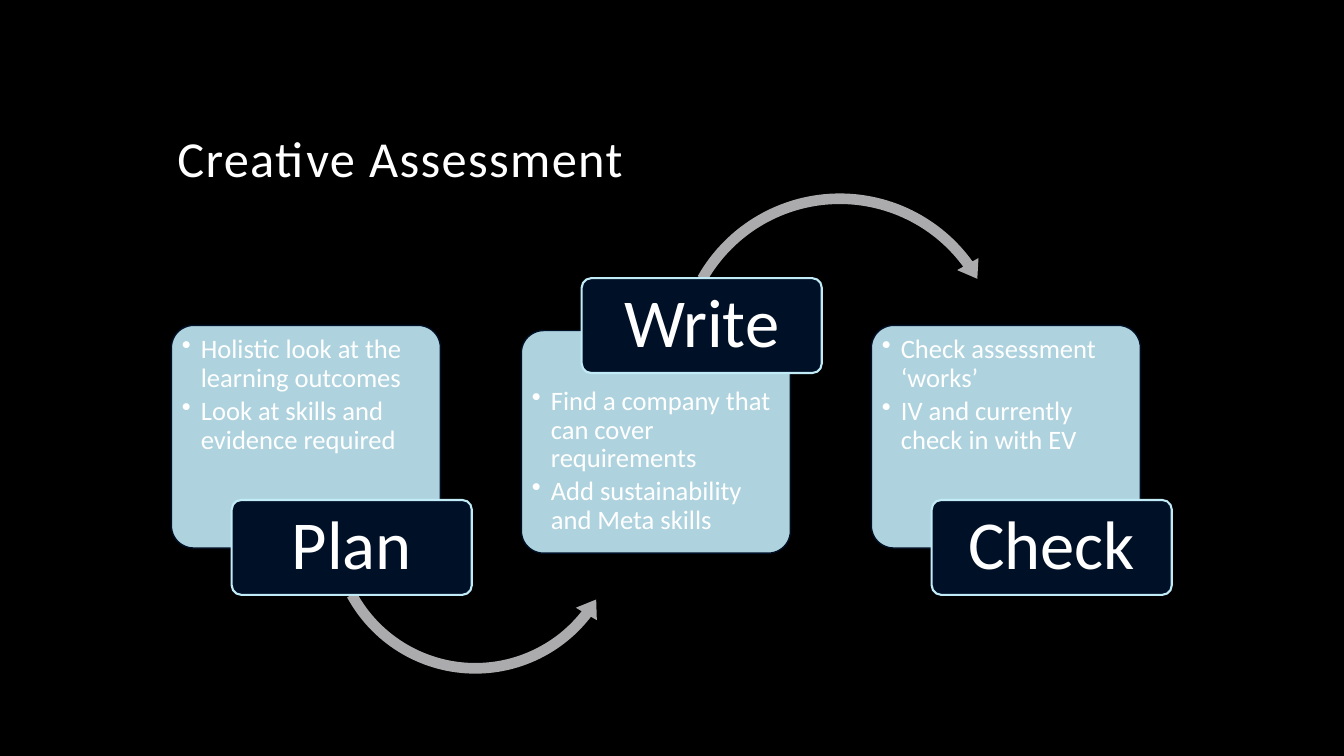
from dataclasses import dataclass

from lxml.etree import SubElement
from pptx import Presentation
from pptx.dml.color import RGBColor
from pptx.enum.shapes import MSO_SHAPE as Shape
from pptx.enum.text import MSO_ANCHOR as Anchor, PP_ALIGN as Align
from pptx.oxml.ns import qn
from pptx.util import Cm, Pt

BLACK = RGBColor(0x00, 0x00, 0x00)
WHITE = RGBColor(0xFF, 0xFF, 0xFF)
NAVY = RGBColor(0x00, 0x10, 0x27)
ICE = RGBColor(0xC1, 0xEB, 0xF7)
GREY = RGBColor(0xAB, 0xAB, 0xAD)

FIRST_LEFT, PITCH = 4.32, 8.82
CARD_W, CARD_H = 6.78, 5.61
LABEL_DX, LABEL_W, LABEL_H = 1.52, 6.05, 2.39


@dataclass
class Arrow:
    kind: Shape
    left: float
    top: float
    size: float
    adjustments: tuple[float, ...]


@dataclass
class Step:
    label: str
    points: list[str]
    card_top: float = 8.2
    label_top: float = 12.6
    text_inset: float = 0.1
    arrow: Arrow | None = None


STEPS = [
    Step("Plan",
         ["Holistic look at the learning outcomes",
          "Look at skills and evidence required"],
         arrow=Arrow(Shape.LEFT_CIRCULAR_ARROW, 8.13, 9.45, 7.7,
                     (0.035, 4.287, 22.7, 90.903, 0.04))),
    Step("Write",
         ["Find a company that can cover requirements",
          "Add sustainability and Meta skills"],
         card_top=8.33, label_top=7.01, text_inset=1.27,
         arrow=Arrow(Shape.CIRCULAR_ARROW, 16.87, 4.7, 8.59,
                     (0.031, 3.813, 194.431, 125.755, 0.036))),
    Step("Check",
         ["Check assessment ‘works’",
          "IV and currently check in with EV"]),
]


def add_text(tf, lines: list[str], size: float, *, align=Align.LEFT,
             anchor=Anchor.TOP, insets=(0.25, 0.13, 0.25, 0.13),
             spacing: float = 0, after: float = 0, bullet: bool = False) -> None:
    tf.word_wrap = True
    tf.vertical_anchor = anchor
    tf.margin_left, tf.margin_top, tf.margin_right, tf.margin_bottom = map(Cm, insets)
    for i, line in enumerate(lines):
        p = tf.add_paragraph() if i else tf.paragraphs[0]
        p.alignment = align
        p.line_spacing = 0.9
        p.space_after = Pt(after)
        if bullet:
            pPr = p._p.get_or_add_pPr()
            pPr.set("marL", str(Cm(0.48)))
            pPr.set("indent", str(-Cm(0.48)))
            SubElement(pPr, qn("a:buChar"), char="•")
        r = p.add_run()
        r.text = line
        r.font.name = "Calibri"
        r.font.size = Pt(size)
        r.font.color.rgb = WHITE
        if spacing:
            r._r.get_or_add_rPr().set("spc", str(round(spacing * 100)))


def add_box(s, kind: Shape, left: float, top: float, width: float, height: float,
            adjustments: tuple[float, ...], fill: RGBColor,
            line: RGBColor | None = None, line_width: float = 1,
            alpha: int = 100):
    sp = s.shapes.add_shape(kind, Cm(left), Cm(top), Cm(width), Cm(height))
    sp.shadow.inherit = False
    for i, value in enumerate(adjustments):
        sp.adjustments[i] = value
    sp.fill.solid()
    sp.fill.fore_color.rgb = fill
    if alpha < 100:
        color = sp._element.spPr.find(qn("a:solidFill")).find(qn("a:srgbClr"))
        SubElement(color, qn("a:alpha"), val=str(alpha * 1000))
    if line is None:
        sp.line.fill.background()
    else:
        sp.line.color.rgb = line
        sp.line.width = Pt(line_width)
    return sp


def add_step(s, step: Step, left: float) -> None:
    card = add_box(s, Shape.ROUNDED_RECTANGLE, left, step.card_top, CARD_W, CARD_H,
                   (0.1,), ICE, NAVY, alpha=90)
    add_text(card.text_frame, step.points, 19, after=3, bullet=True,
             insets=(0.1, step.text_inset, 0.1, 0.1))
    if step.arrow:
        a = step.arrow
        add_box(s, a.kind, a.left, a.top, a.size, a.size, a.adjustments, GREY)
    label = add_box(s, Shape.ROUNDED_RECTANGLE, left + LABEL_DX, step.label_top,
                    LABEL_W, LABEL_H, (0.1,), NAVY, ICE, 1.5)
    add_text(label.text_frame, [step.label], 49, align=Align.CENTER,
             anchor=Anchor.MIDDLE, insets=(0.25, 0.17, 0.25, 0.17))


def main() -> None:
    prs = Presentation()
    prs.slide_width, prs.slide_height = Cm(33.87), Cm(19.05)
    s = prs.slides.add_slide(prs.slide_layouts[6])
    s.background.fill.solid()
    s.background.fill.fore_color.rgb = BLACK
    title = s.shapes.add_textbox(Cm(4.22), Cm(1.07), Cm(25.4), Cm(3.81))
    add_text(title.text_frame, ["Creative Assessment"], 36,
             anchor=Anchor.BOTTOM, spacing=1)
    for i, step in enumerate(STEPS):
        add_step(s, step, FIRST_LEFT + i * PITCH)
    prs.save("out.pptx")


if __name__ == "__main__":
    main()
